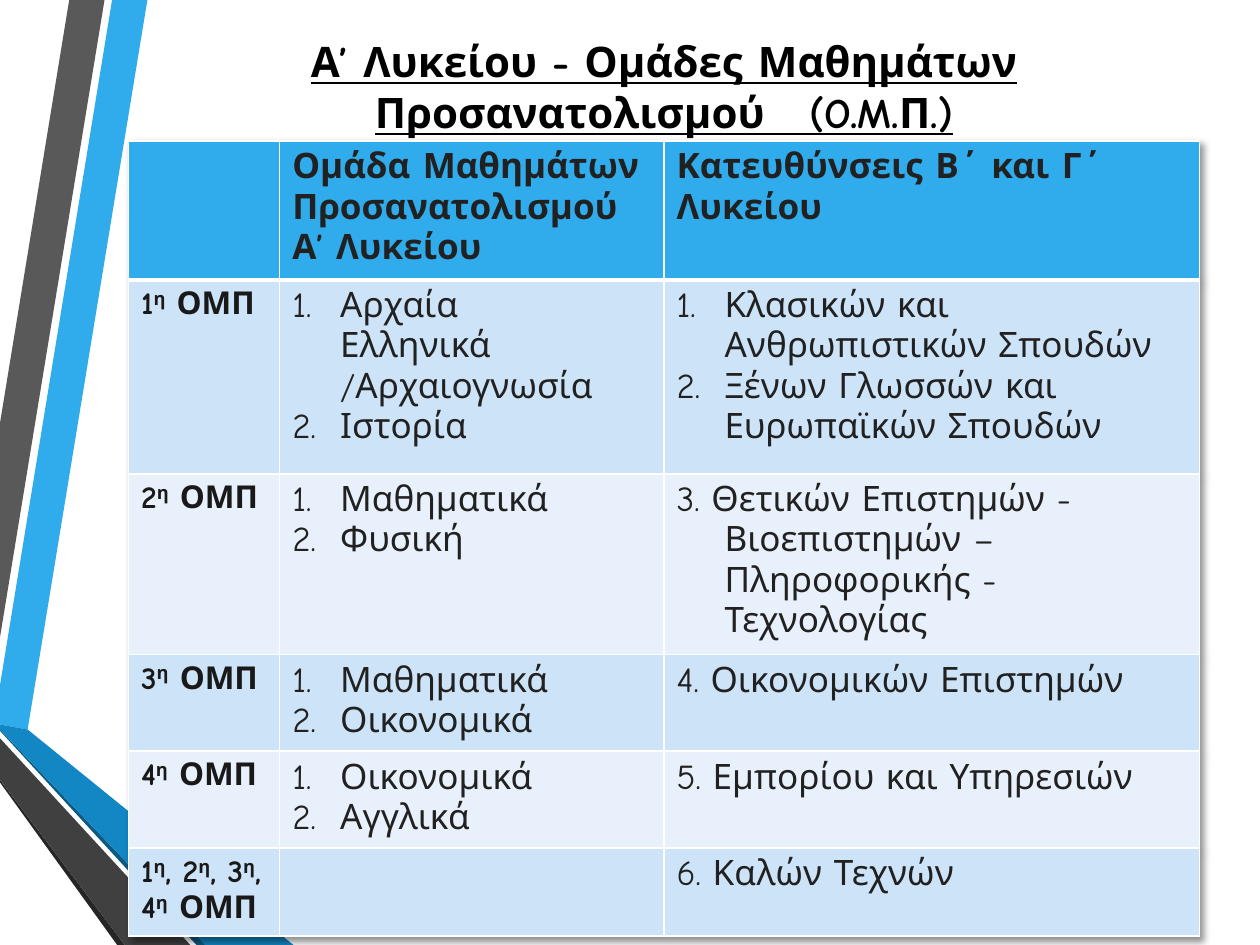
from lxml import etree
from pptx import Presentation, util as u
from pptx.dml.color import RGBColor
from pptx.enum import text
from pptx.oxml import ns

FONT = "Comic Neue"
INK, LABEL_INK = "212121", "191919"
RIBBONS = [
    ("30ACEC", [(0, 5.44), (0, 5.75), (0.22, 5.79), (1.17, 0), (0.89, 0)]),
    ("595959", [(0.83, 0), (0.55, 0), (0, 3.36), (0, 5.06)]),
    ("262626", [(0, 6.19), (0, 6.21), (0.93, 7.5), (0.99, 7.5)]),
    ("0C5A82", [(0, 5.79), (0, 5.8), (1.56, 7.5), (1.63, 7.5)]),
    ("1287C3", [(0, 5.79), (1.63, 7.5), (2.33, 7.5), (0.22, 5.79), (0, 5.75)]),
    ("404040", [(0, 6.19), (0.99, 7.5), (1.51, 7.5), (0, 5.86)]),
]
TITLE = "Α’ Λυκείου - Ομάδες Μαθημάτων Προσανατολισμού   (O.M.Π.)"
HEADINGS = ["", "Ομάδα Μαθημάτων Προσανατολισμού Α’ Λυκείου",
            "Κατευθύνσεις Β΄ και Γ΄ Λυκείου"]
GROUPS = [
    ("1η ΟΜΠ", ["Αρχαία Ελληνικά /Αρχαιογνωσία", "Ιστορία"],
     ["Κλασικών και Ανθρωπιστικών Σπουδών", "Ξένων Γλωσσών και Ευρωπαϊκών Σπουδών"]),
    ("2η ΟΜΠ", ["Μαθηματικά", "Φυσική"],
     "3. Θετικών Επιστημών - Βιοεπιστημών – Πληροφορικής - Τεχνολογίας"),
    ("3η ΟΜΠ", ["Μαθηματικά", "Οικονομικά"], "4. Οικονομικών Επιστημών"),
    ("4η ΟΜΠ", ["Οικονομικά", "Αγγλικά"], "5. Εμπορίου και Υπηρεσιών"),
    ("1η, 2η, 3η, 4η ΟΜΠ", [], "6. Καλών Τεχνών"),
]
COLUMNS = [1.2, 3.05, 4.25]
ROWS = [1.07, 1.54, 1.4, 0.75, 0.75, 0.7]


def color(value):
    """Turn a hex string into a colour."""
    return RGBColor.from_string(value)


def add_element(parent, tag, **attributes):
    """Append a DrawingML element with the given attributes."""
    element = etree.SubElement(parent, ns.qn(tag))
    for name, value in attributes.items():
        element.set(name, str(value))
    return element


def add_run(paragraph, words, size, ink=INK, bold=False, superscript=False):
    """Add one formatted run to a paragraph."""
    run = paragraph.add_run()
    run.text = words
    run.font.name, run.font.size, run.font.bold = FONT, u.Pt(size), bold
    run.font.color.rgb = color(ink)
    if superscript:
        run.font._element.set("baseline", "30000")
    return run


def add_ribbons(slide):
    """Draw the folded ribbons along the left edge."""
    for fill, corners in RIBBONS:
        points = [(u.Inches(x), u.Inches(y)) for x, y in corners]
        builder = slide.shapes.build_freeform(*points[0])
        builder.add_line_segments(points[1:], close=True)
        shape = builder.convert_to_shape()
        shape.shadow.inherit = False
        shape.fill.solid()
        shape.fill.fore_color.rgb = color(fill)
        shape.line.fill.background()


def add_title(slide, left, top, width, height):
    """Place the underlined heading in its box."""
    frame = slide.shapes.add_textbox(*map(u.Inches, (left, top, width, height))).text_frame
    frame.word_wrap = True
    frame.vertical_anchor = text.MSO_ANCHOR.MIDDLE
    paragraph = frame.paragraphs[0]
    paragraph.alignment = text.PP_ALIGN.CENTER
    add_run(paragraph, TITLE, 24, "000000", bold=True).font.underline = True


def style_cell(cell, fill, top=1, bottom=1):
    """Give a cell white borders and a solid fill."""
    properties = cell._tc.get_or_add_tcPr()
    for side, width in (("L", 1), ("R", 1), ("T", top), ("B", bottom)):
        line = add_element(properties, f"a:ln{side}", w=u.Pt(width))
        add_element(add_element(line, "a:solidFill"), "a:srgbClr", val="FFFFFF")
    cell.fill.solid()
    cell.fill.fore_color.rgb = color(fill)


def hang(paragraph, numbered):
    """Give a paragraph a hanging indent and, if asked, a number."""
    properties = paragraph._p.get_or_add_pPr()
    properties.set("marL", str(u.Inches(0.38)))
    properties.set("indent", str(-u.Inches(0.38)))
    if numbered:
        add_element(properties, "a:buFont", typeface="+mj-lt")
        add_element(properties, "a:buAutoNum", type="arabicPeriod")


def write_label(cell, label):
    """Write a group label with raised ordinal endings."""
    paragraph = cell.text_frame.paragraphs[0]
    for index, piece in enumerate(label.split("η")):
        if index:
            add_run(paragraph, "η", 18, LABEL_INK, bold=True, superscript=True)
        add_run(paragraph, piece, 18, LABEL_INK, bold=True)


def write_entries(cell, entries):
    """Write a numbered list, or a single hanging line."""
    numbered = isinstance(entries, list)
    frame = cell.text_frame
    for index, entry in enumerate(entries if numbered else [entries]):
        paragraph = frame.add_paragraph() if index else frame.paragraphs[0]
        hang(paragraph, numbered)
        add_run(paragraph, entry, 20)


def add_groups_table(slide, left, top):
    """Build the table of course groups from its top left corner."""
    box = map(u.Inches, (left, top, sum(COLUMNS), sum(ROWS)))
    table = slide.shapes.add_table(len(ROWS), len(COLUMNS), *box).table
    for column, width in zip(table.columns, COLUMNS):
        column.width = u.Inches(width)
    for row, height in zip(table.rows, ROWS):
        row.height = u.Inches(height)
    effects = etree.Element(ns.qn("a:effectLst"))
    shadow = add_element(effects, "a:outerShdw", blurRad=u.Pt(4), dist=u.Pt(3),
                         dir=2700000, algn="tl", rotWithShape=0)
    add_element(add_element(shadow, "a:srgbClr", val="000000"), "a:alpha", val=43000)
    table._tbl.tblPr.insert(0, effects)

    for column, heading in enumerate(HEADINGS):
        cell = table.cell(0, column)
        style_cell(cell, "30ACEC", bottom=3)
        if heading:
            add_run(cell.text_frame.paragraphs[0], heading, 20, bold=True)
    for row, (label, subjects, directions) in enumerate(GROUPS, 1):
        cells = [table.cell(row, column) for column in range(len(COLUMNS))]
        for cell in cells:
            style_cell(cell, "CDE3F8" if row % 2 else "E8F1FB", top=3 if row == 1 else 1)
        write_label(cells[0], label)
        write_entries(cells[1], subjects)
        write_entries(cells[2], directions)


def main():
    """Build and save the presentation."""
    presentation = Presentation()
    presentation.slide_width, presentation.slide_height = u.Inches(10), u.Inches(7.5)
    slide = presentation.slides.add_slide(presentation.slide_layouts[6])
    add_ribbons(slide)
    add_title(slide, 1.02, 0.18, 8.5, 1.01)
    add_groups_table(slide, 1.02, 1.12)
    presentation.save("out.pptx")


if __name__ == "__main__":
    main()
